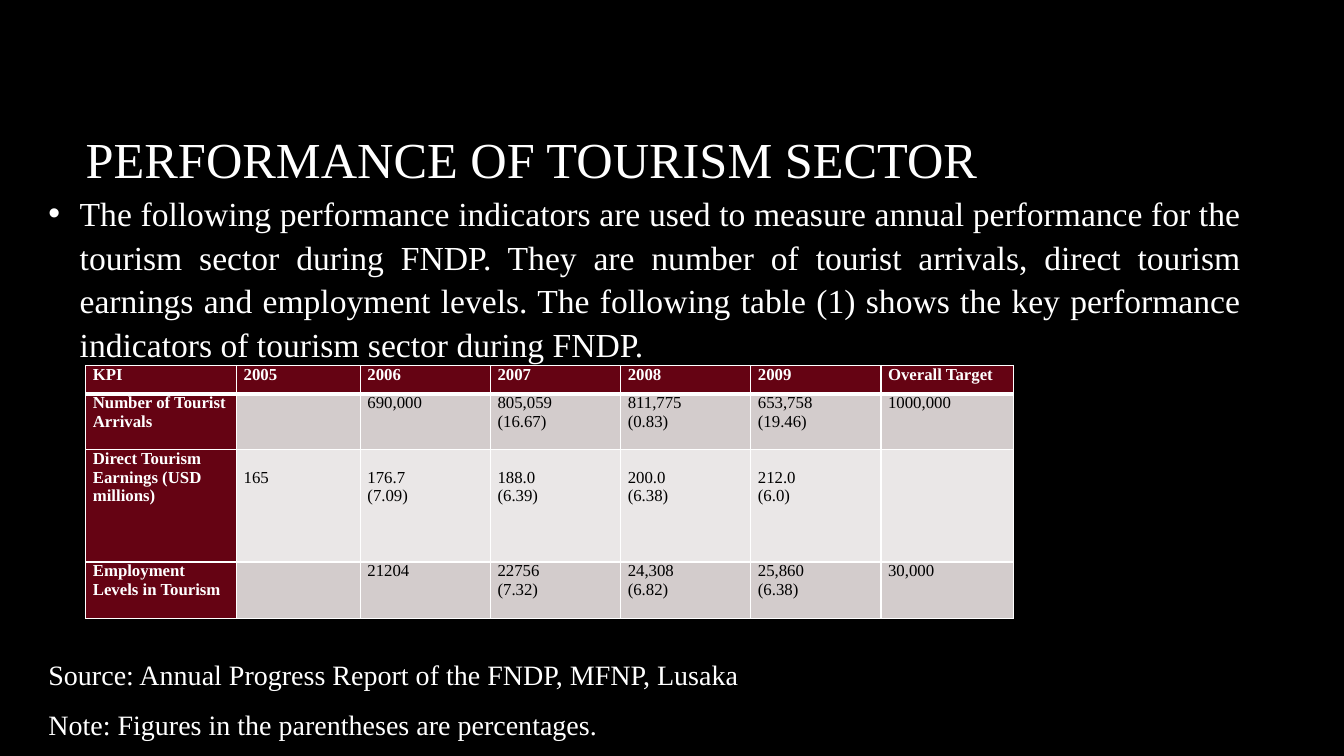
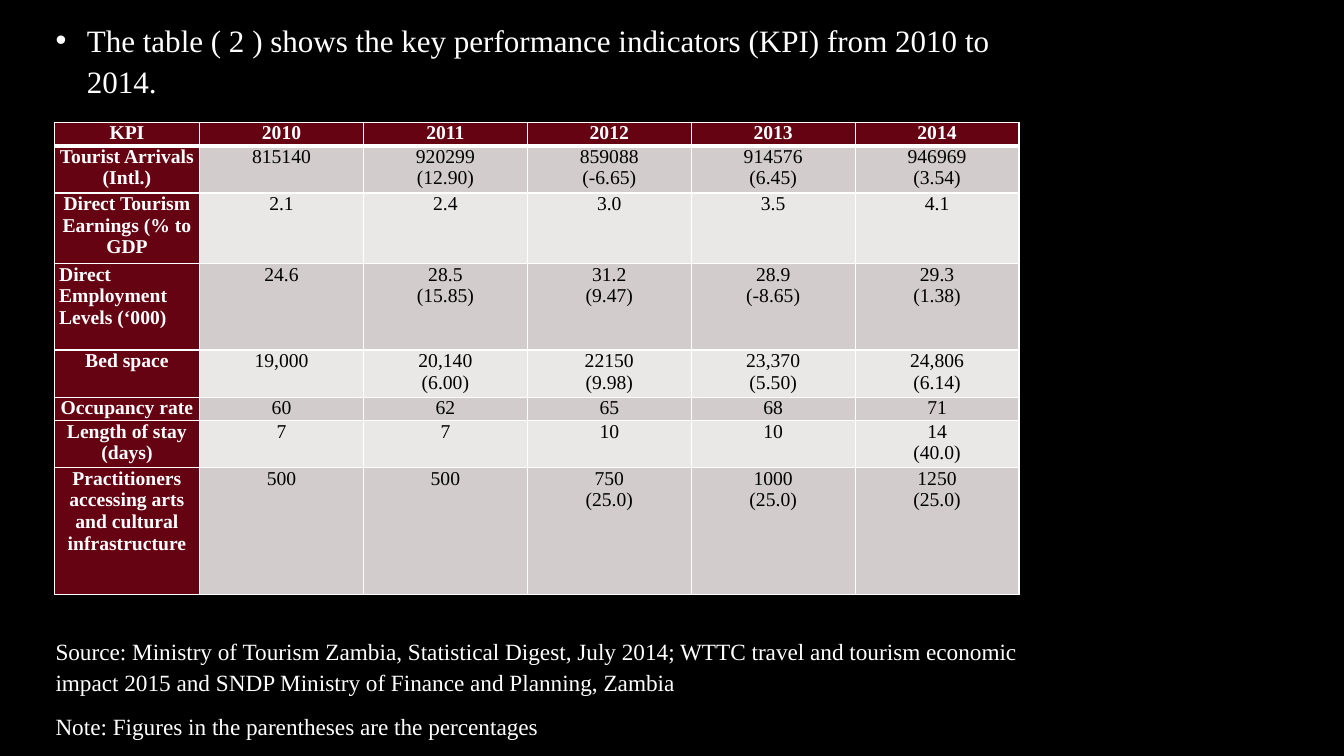
from dataclasses import dataclass

from lxml import etree
from pptx import Presentation
from pptx.dml.color import RGBColor
from pptx.enum import text
from pptx.oxml import parse_xml
from pptx.oxml.ns import nsdecls, qn
from pptx.util import Cm, Pt


@dataclass(frozen=True)
class Theme:
    font: str = "Times New Roman"
    background: RGBColor = RGBColor(0x00, 0x00, 0x00)
    light: RGBColor = RGBColor(0xFF, 0xFF, 0xFF)
    dark: RGBColor = RGBColor(0x00, 0x00, 0x00)
    heading: RGBColor = RGBColor(0x65, 0x03, 0x13)
    bands: tuple = (RGBColor(0xD3, 0xCC, 0xCC), RGBColor(0xEA, 0xE7, 0xE7))
    title: float = 36
    first_intro: float = 24
    first_notes: float = 20
    first_table: float = 12
    second_intro: float = 22.2
    second_notes: float = 16.6
    second_table: float = 14
    line_spacing: float = 1.09
    rule: float = 1
    header_rule: float = 3


theme = Theme()
LEFT, CENTER, JUSTIFY = (
    text.PP_ALIGN.LEFT, text.PP_ALIGN.CENTER, text.PP_ALIGN.JUSTIFY)


def add_text(slide, box, lines, size, align=LEFT, bullet=False):
    """Place paragraphs in a box given as left, top, width, height in cm."""
    frame = slide.shapes.add_textbox(*map(Cm, box)).text_frame
    frame.word_wrap = True
    frame.margin_left = frame.margin_right = 0
    frame.margin_top = frame.margin_bottom = 0
    for number, line in enumerate(lines):
        paragraph = frame.add_paragraph() if number else frame.paragraphs[0]
        if bullet:
            properties = paragraph._p.get_or_add_pPr()
            properties.set("marL", str(Cm(0.79)))
            properties.set("indent", str(-Cm(0.79)))
            etree.SubElement(properties, qn("a:buFont")).set("typeface", "Arial")
            etree.SubElement(properties, qn("a:buChar")).set("char", "•")
        paragraph.alignment = align
        paragraph.line_spacing = theme.line_spacing
        paragraph.space_after = Pt(10)
        run = paragraph.add_run()
        run.text = line
        run.font.name, run.font.size = theme.font, Pt(size)
        run.font.color.rgb = theme.light


def add_kpi_table(slide, corner, widths, heights, rows, size, side,
                  align=LEFT, left_labels=(), lowered=None):
    """Each value holds a figure and, after a space, its percentage."""
    grid = slide.shapes.add_table(
        len(rows), len(widths), *map(Cm, corner),
        Cm(sum(widths)), Cm(sum(heights))).table
    for column, width in zip(grid.columns, widths):
        column.width = Cm(width)
    for r, (label, *values) in enumerate(rows):
        grid.rows[r].height = Cm(heights[r])
        for c, content in enumerate([label, *values]):
            cell = grid.cell(r, c)
            is_heading = r == 0 or c == 0
            cell.margin_left = cell.margin_right = Cm(side)
            # A lowered row starts its values on the second line
            drop = r == lowered and not is_heading
            cell.margin_top, cell.margin_bottom = Cm(0.47 if drop else 0), 0
            cell.fill.solid()
            cell.fill.fore_color.rgb = (
                theme.heading if is_heading else theme.bands[(r - 1) % 2])
            # Borders come before the fill in the cell properties
            for position, edge in enumerate("LRTB"):
                thick = (r, edge) in ((0, "B"), (1, "T"))
                weight = Pt(theme.header_rule if thick else theme.rule)
                cell._tc.get_or_add_tcPr().insert(position, parse_xml(
                    f'<a:ln{edge} {nsdecls("a")} w="{weight}"><a:solidFill>'
                    f'<a:srgbClr val="{theme.light}"/></a:solidFill></a:ln{edge}>'))
            lines = [content] if is_heading else content.split()
            for number, line in enumerate(lines):
                paragraph = (cell.text_frame.add_paragraph() if number
                             else cell.text_frame.paragraphs[0])
                paragraph.alignment = LEFT if content in left_labels else align
                run = paragraph.add_run()
                run.text = line
                run.font.name, run.font.size = theme.font, Pt(size)
                run.font.bold = is_heading
                run.font.color.rgb = theme.light if is_heading else theme.dark


# Presentation with two black slides
deck = Presentation()
deck.slide_width, deck.slide_height = Cm(33.87), Cm(19.05)
slides = [deck.slides.add_slide(deck.slide_layouts[6]) for _ in range(2)]
for slide in slides:
    slide.background.fill.solid()
    slide.background.fill.fore_color.rgb = theme.background
fndp, later_years = slides

# Slide 1: indicators during FNDP
add_text(fndp, (2.16, 3.09, 27.6, 1.5), ["PERFORMANCE OF TOURISM SECTOR"],
         theme.title)
add_text(fndp, (1.22, 4.76, 30.05, 4.2), [
    "The following performance indicators are used to measure annual "
    "performance for the tourism sector during FNDP. They are number of "
    "tourist arrivals, direct tourism earnings and employment levels. The "
    "following table (1) shows the key performance indicators of tourism "
    "sector during FNDP."], theme.first_intro, JUSTIFY, bullet=True)
add_kpi_table(
    fndp, (2.16, 9.21), [3.8, 3.12] + [3.28] * 4 + [3.35],
    [0.71, 1.41, 2.83, 1.43], [
        ["KPI", "2005", "2006", "2007", "2008", "2009", "Overall Target"],
        ["Number of Tourist Arrivals", "", "690,000", "805,059 (16.67)",
         "811,775 (0.83)", "653,758 (19.46)", "1000,000"],
        ["Direct Tourism Earnings (USD millions)", "165", "176.7 (7.09)",
         "188.0 (6.39)", "200.0 (6.38)", "212.0 (6.0)", ""],
        ["Employment Levels in Tourism", "", "21204", "22756 (7.32)",
         "24,308 (6.82)", "25,860 (6.38)", "30,000"],
    ], theme.first_table, side=0.18, lowered=2)
add_text(fndp, (1.22, 16.48, 30.05, 2.4), [
    "Source: Annual Progress Report of the FNDP, MFNP, Lusaka",
    "Note: Figures in the parentheses are percentages."],
    theme.first_notes, JUSTIFY)

# Slide 2: indicators from 2010 to 2014
add_text(later_years, (1.4, 0.46, 24.2, 2), [
    "The table ( 2 ) shows the key performance indicators (KPI) from 2010 "
    "to 2014."], theme.second_intro, bullet=True)
add_kpi_table(
    later_years, (1.37, 3.08), [3.66] + [4.13] * 5,
    [0.55, 1.1, 1.64, 2.18, 1.1, 0.58, 1.1, 3.2], [
        ["KPI", "2010", "2011", "2012", "2013", "2014"],
        ["Tourist Arrivals (Intl.)", "815140", "920299 (12.90)",
         "859088 (-6.65)", "914576 (6.45)", "946969 (3.54)"],
        ["Direct Tourism Earnings (% to GDP", "2.1", "2.4", "3.0", "3.5", "4.1"],
        ["Direct Employment Levels (‘000)", "24.6", "28.5 (15.85)",
         "31.2 (9.47)", "28.9 (-8.65)", "29.3 (1.38)"],
        ["Bed space", "19,000", "20,140 (6.00)", "22150 (9.98)",
         "23,370 (5.50)", "24,806 (6.14)"],
        ["Occupancy rate", "60", "62", "65", "68", "71"],
        ["Length of stay (days)", "7", "7", "10", "10", "14 (40.0)"],
        ["Practitioners accessing arts and cultural infrastructure", "500",
         "500", "750 (25.0)", "1000 (25.0)", "1250 (25.0)"],
    ], theme.second_table, side=0.12, align=CENTER,
    left_labels=["Direct Employment Levels (‘000)"])
add_text(later_years, (1.4, 16, 24.2, 2.6), [
    "Source: Ministry of Tourism Zambia, Statistical Digest, July 2014; WTTC "
    "travel and tourism economic impact 2015 and SNDP Ministry of Finance and "
    "Planning, Zambia",
    "Note: Figures in the parentheses are the percentages"],
    theme.second_notes, JUSTIFY)

deck.save("out.pptx")
